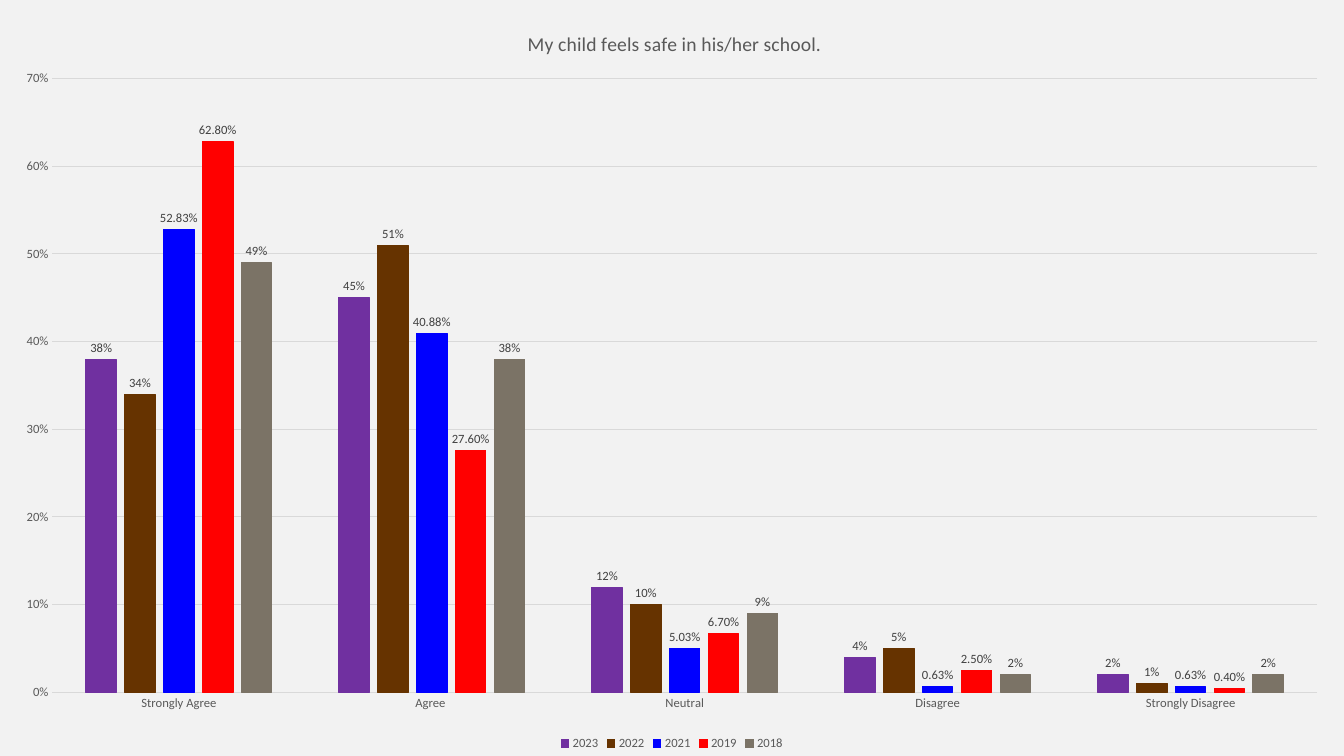
from dataclasses import dataclass

from lxml.etree import SubElement
from pptx import Presentation
from pptx.chart.data import CategoryChartData
from pptx.dml.color import RGBColor
from pptx.enum.chart import (XL_CHART_TYPE, XL_LABEL_POSITION,
                             XL_LEGEND_POSITION, XL_TICK_MARK)
from pptx.oxml.ns import qn
from pptx.util import Cm, Pt

TITLE = "My child feels safe in his/her school."
ANSWERS = ["Strongly Agree", "Agree ", "Neutral", "Disagree",
           "Strongly Disagree"]
# year, shares, bar colour, label format
YEARS = [
    ("2023", (0.38, 0.45, 0.12, 0.04, 0.02), "7030A0", "0%"),
    ("2022", (0.34, 0.51, 0.10, 0.05, 0.01), "663300", "0%"),
    ("2021", (0.5283, 0.4088, 0.0503, 0.0063, 0.0063), "0000FF", "0.00%"),
    ("2019", (0.628, 0.276, 0.067, 0.025, 0.004), "FF0000", "0.00%"),
    ("2018", (0.49, 0.38, 0.09, 0.02, 0.02), "7B7366", "0%"),
]


@dataclass(frozen=True)
class Theme:
    font: str = "Calibri"
    back: str = "F2F2F2"
    text: str = "595959"
    label: str = "404040"
    grid: str = "D9D9D9"
    large: float = 14
    small: float = 9
    line: float = 0.75


THEME = Theme()
WIDTH, HEIGHT = Cm(33.87), Cm(19.05)


def style(font, color, size=THEME.small):
    font.name = THEME.font
    font.size = Pt(size)
    font.bold = False
    font.color.rgb = RGBColor.from_string(color)


def stroke(line, color):
    line.width = Pt(THEME.line)
    line.color.rgb = RGBColor.from_string(color)


def place(part, index, inner=False, **box):
    """Put a chart part at x, y, w, h, given as shares of the chart."""
    for old in part.findall(qn("c:layout")):
        part.remove(old)
    layout = part.makeelement(qn("c:layout"))
    part.insert(index, layout)
    manual = SubElement(layout, qn("c:manualLayout"))
    if inner:
        SubElement(manual, qn("c:layoutTarget")).set("val", "inner")
    for side in "xy":
        SubElement(manual, qn(f"c:{side}Mode")).set("val", "edge")
    for side, share in box.items():
        SubElement(manual, qn(f"c:{side}")).set("val", str(share))


def add_title(chart):
    chart.has_title = True
    run = chart.chart_title.text_frame.paragraphs[0].add_run()
    run.text = TITLE
    style(run.font, THEME.text, THEME.large)
    chart.chart_title.include_in_layout = False
    place(chart.chart_title._element, 1, x=0.39, y=0.035)


def add_legend(chart):
    chart.has_legend = True
    legend = chart.legend
    legend.position = XL_LEGEND_POSITION.BOTTOM
    legend.include_in_layout = False
    style(legend.font, THEME.text)
    place(legend._element, 1, x=0.414, y=0.967, w=0.172, h=0.033)


def set_axes(chart):
    for axis in (chart.category_axis, chart.value_axis):
        axis.major_tick_mark = axis.minor_tick_mark = XL_TICK_MARK.NONE
        style(axis.tick_labels.font, THEME.text)
    stroke(chart.category_axis.format.line, THEME.grid)
    value = chart.value_axis
    value.minimum_scale, value.maximum_scale = 0, 0.7
    value.major_unit = 0.1
    value.format.line.fill.background()
    value.has_major_gridlines = True
    stroke(value.major_gridlines.format.line, THEME.grid)
    value.tick_labels.number_format = "0%"
    value.tick_labels.number_format_is_linked = False


def set_bars(chart):
    plot = chart.plots[0]
    plot.gap_width, plot.overlap = 219, -27
    plot.vary_by_categories = False
    for bars, (_, _, color, form) in zip(plot.series, YEARS):
        bars.invert_if_negative = False
        bars.format.fill.solid()
        bars.format.fill.fore_color.rgb = RGBColor.from_string(color)
        stroke(bars.format.line, color)
        labels = bars.data_labels
        labels.show_value = True
        labels.position = XL_LABEL_POSITION.OUTSIDE_END
        labels.number_format = form
        labels.number_format_is_linked = False
        style(labels.font, THEME.label)


def main():
    deck = Presentation()
    deck.slide_width, deck.slide_height = WIDTH, HEIGHT
    slide = deck.slides.add_slide(deck.slide_layouts[6])
    slide.background.fill.solid()
    slide.background.fill.fore_color.rgb = RGBColor.from_string(THEME.back)

    data = CategoryChartData()
    data.categories = ANSWERS
    for year, shares, _, form in YEARS:
        data.add_series(year, shares, form)
    chart = slide.shapes.add_chart(XL_CHART_TYPE.COLUMN_CLUSTERED,
                                   Cm(0), Cm(0), WIDTH, HEIGHT, data).chart
    style(chart.font, "000000", 10)
    add_title(chart)
    add_legend(chart)
    set_axes(chart)
    set_bars(chart)
    area = chart._chartSpace.chart.plotArea
    place(area, 0, inner=True, x=0.039, y=0.104, w=0.941, h=0.812)
    deck.save("out.pptx")


if __name__ == "__main__":
    main()
